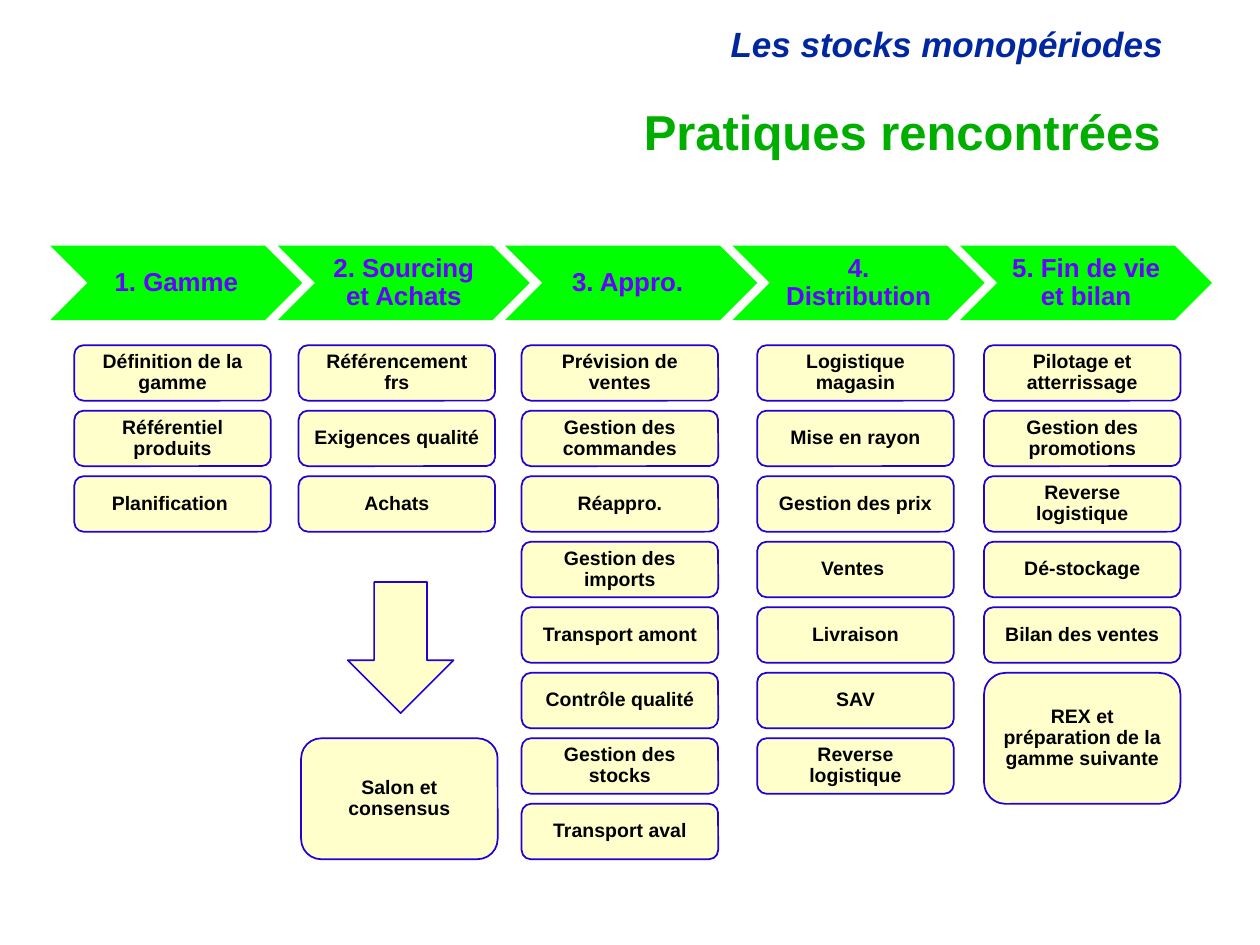
from pptx import Presentation
from pptx.dml.color import RGBColor
from pptx.enum.shapes import MSO_SHAPE
from pptx.enum.text import MSO_ANCHOR, PP_ALIGN
from pptx.util import Inches, Pt

CHEVRON, ROUND, ARROW = MSO_SHAPE.CHEVRON, MSO_SHAPE.ROUNDED_RECTANGLE, MSO_SHAPE.DOWN_ARROW
MIDDLE, TOP = MSO_ANCHOR.MIDDLE, MSO_ANCHOR.TOP
CENTER, RIGHT = PP_ALIGN.CENTER, PP_ALIGN.RIGHT

THEME = "Les stocks monopériodes"
TITLE = "Pratiques rencontrées"

# Step name, left edge of its boxes, box labels from top to bottom
STEPS = [
    ("1. Gamme", 0.59,
     ["Définition de la gamme", "Référentiel produits", "Planification "]),
    ("2. Sourcing et Achats", 2.37,
     ["Référencement frs", "Exigences qualité", "Achats"]),
    ("3. Appro. ", 4.14,
     ["Prévision de ventes", "Gestion des commandes", "Réappro.", "Gestion des imports",
      "Transport amont", "Contrôle qualité", "Gestion des stocks", "Transport aval"]),
    ("4. Distribution", 6.01,
     ["Logistique magasin", "Mise en rayon", "Gestion des prix", "Ventes ",
      "Livraison", "SAV", "Reverse logistique"]),
    ("5. Fin de vie et bilan", 7.81,
     ["Pilotage et atterrissage", "Gestion des promotions", "Reverse logistique",
      "Dé-stockage", "Bilan des ventes"]),
]
# Label, left, row, height
TALL = [
    ("REX et préparation de la gamme suivante", 7.81, 5, 1.04),
    ("Salon et consensus", 2.39, 6, 0.96),
]

GREEN, CREAM, BLUE = "00FF00", "FFFFCC", "2300D4"
STEP_X, STEP_Y, STEP_W, STEP_H, STEP_GAP = 0.4, 1.95, 2, 0.59, 1.805
BOX_Y, BOX_W, BOX_H, BOX_GAP = 2.74, 1.56, 0.44, 0.52


def rgb(code):
    return RGBColor.from_string(code)


def write(shape, text, size, color="000000", align=CENTER, anchor=MIDDLE, italic=False):
    frame = shape.text_frame
    frame.word_wrap = True
    frame.vertical_anchor = anchor
    par = frame.paragraphs[0]
    par.alignment = align
    par.line_spacing = 0.9
    run = par.add_run()
    run.text = text
    font = run.font
    font.name, font.size = "Arial", Pt(size)
    font.bold, font.italic = True, italic
    font.color.rgb = rgb(color)


def draw(kind, x, y, w, h, fill, line=None):
    shape = slide.shapes.add_shape(kind, Inches(x), Inches(y), Inches(w), Inches(h))
    shape.shadow.inherit = False
    shape.fill.solid()
    shape.fill.fore_color.rgb = rgb(fill)
    if line:
        shape.line.color.rgb = rgb(line)
        shape.line.width = Pt(1)
    else:
        shape.line.fill.background()
    return shape


def box(text, x, row, h=BOX_H):
    shape = draw(ROUND, x, BOX_Y + row * BOX_GAP, BOX_W, h, CREAM, BLUE)
    write(shape, text, 11.1)


deck = Presentation()
deck.slide_width, deck.slide_height = Inches(10), Inches(7.5)
slide = deck.slides.add_slide(deck.slide_layouts[5])

theme = slide.shapes.add_textbox(Inches(1.25), Inches(0.17), Inches(8.08), Inches(0.4))
write(theme, THEME, 20, "00279F", RIGHT, TOP, italic=True)

title = slide.shapes.title
title.left, title.top = Inches(1.39), Inches(0.82)
title.width, title.height = Inches(7.92), Inches(0.5)
write(title, TITLE, 28, "00AE00", RIGHT)

for i, (name, x, labels) in enumerate(STEPS):
    step = draw(CHEVRON, STEP_X + i * STEP_GAP, STEP_Y, STEP_W, STEP_H, GREEN)
    write(step, name, 14.8, "6600FF")
    for row, label in enumerate(labels):
        box(label, x, row)

for item in TALL:
    box(*item)
draw(ARROW, 2.76, 4.62, 0.84, 1.04, CREAM, BLUE)

deck.save("out.pptx")
